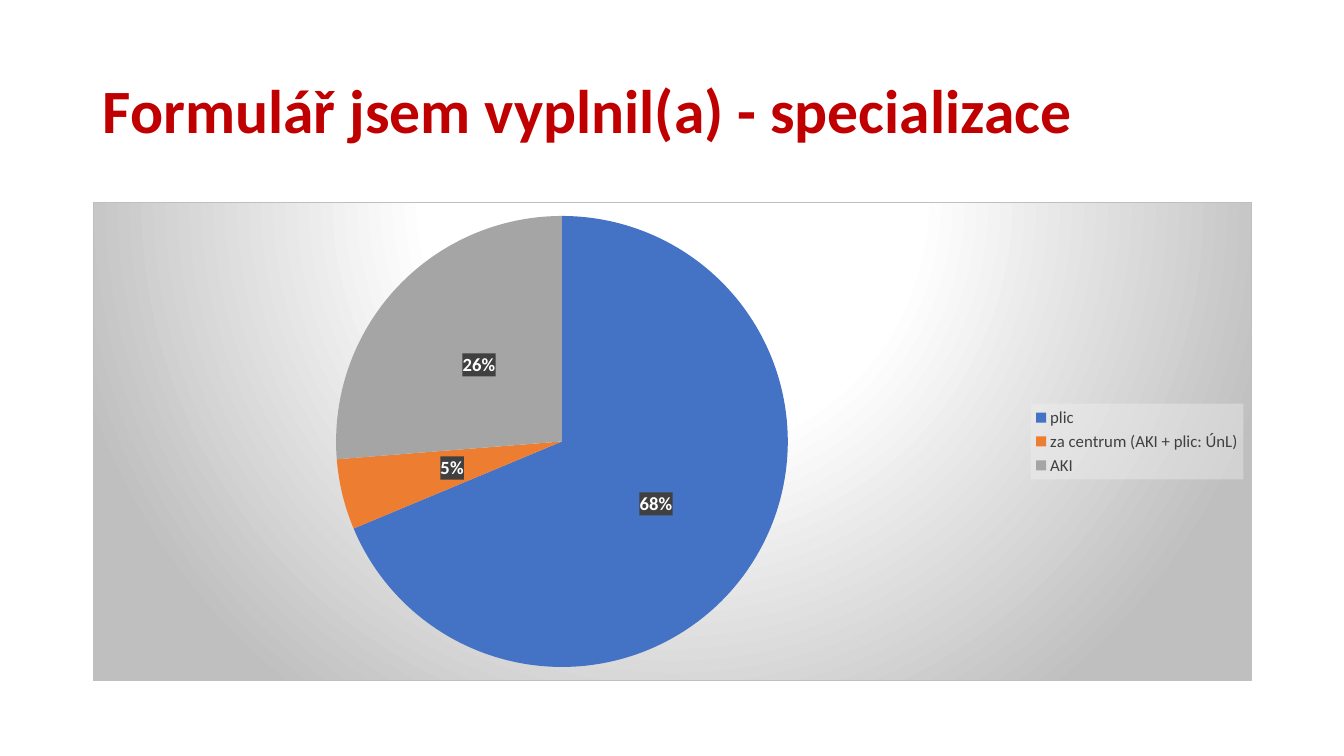
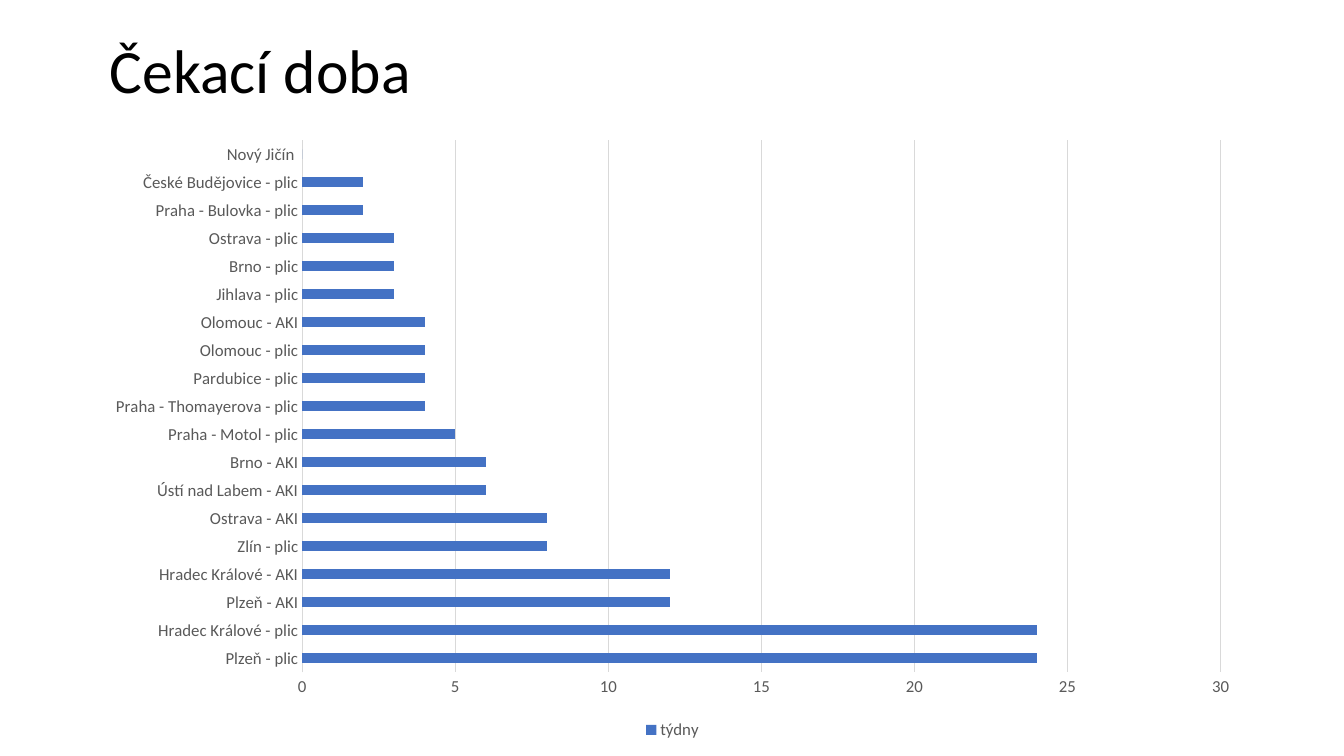
import pptx
import pptx.chart.data
import pptx.dml.color
import pptx.enum.chart
import pptx.enum.text
import pptx.oxml
import pptx.oxml.ns
import pptx.util

Inches = pptx.util.Inches
Pt = pptx.util.Pt
RGBColor = pptx.dml.color.RGBColor
ChartType = pptx.enum.chart.XL_CHART_TYPE
LegendPosition = pptx.enum.chart.XL_LEGEND_POSITION
qn = pptx.oxml.ns.qn

FONT = "Calibri"
BLACK = RGBColor(0x00, 0x00, 0x00)
WHITE = RGBColor(0xFF, 0xFF, 0xFF)
RED = RGBColor(0xC0, 0x00, 0x00)
BLUE = RGBColor(0x44, 0x72, 0xC4)
ORANGE = RGBColor(0xED, 0x7D, 0x31)
GRAY = RGBColor(0xA5, 0xA5, 0xA5)
SILVER = RGBColor(0xBF, 0xBF, 0xBF)
GRID = RGBColor(0xD9, 0xD9, 0xD9)
PALE = RGBColor(0xF2, 0xF2, 0xF2)
AXIS_TEXT = RGBColor(0x59, 0x59, 0x59)
DARK_TEXT = RGBColor(0x40, 0x40, 0x40)

LEFT = 0.92
WIDTH = 11.5
TITLE_HEIGHT = 1.45

SPECIALIZATIONS = [
    ("plic", 68, BLUE),
    ("za centrum (AKI + plic: ÚnL)", 5, ORANGE),
    ("AKI", 26, GRAY),
]
WAITING_WEEKS = [
    ("Plzeň - plic", 24),
    ("Hradec Králové - plic", 24),
    ("Plzeň - AKI", 12),
    ("Hradec Králové - AKI", 12),
    ("Zlín - plic", 8),
    ("Ostrava - AKI", 8),
    ("Ústí nad Labem - AKI", 6),
    ("Brno - AKI", 6),
    ("Praha - Motol - plic", 5),
    ("Praha - Thomayerova - plic", 4),
    ("Pardubice - plic", 4),
    ("Olomouc - plic", 4),
    ("Olomouc - AKI", 4),
    ("Jihlava - plic", 3),
    ("Brno - plic", 3),
    ("Ostrava - plic", 3),
    ("Praha - Bulovka - plic", 2),
    ("České Budějovice - plic", 2),
    ("Nový Jičín ", 0),
]


def style_font(font, size, color, bold=False):
    font.name = FONT
    font.size = Pt(size)
    font.bold = bold
    font.color.rgb = color


def add_titled_slide(deck, text, left, top, color, bold=False):
    slide = deck.slides.add_slide(deck.slide_layouts[5])
    title = slide.shapes.title
    title.left, title.top = Inches(left), Inches(top)
    title.width, title.height = Inches(WIDTH), Inches(TITLE_HEIGHT)
    frame = title.text_frame
    frame.text = text
    frame.vertical_anchor = pptx.enum.text.MSO_ANCHOR.MIDDLE
    heading = frame.paragraphs[0]
    heading.alignment = pptx.enum.text.PP_ALIGN.LEFT
    heading.line_spacing = 0.9
    style_font(heading.font, 44, color, bold)
    return slide


def add_chart(slide, kind, top, height, series_name, labels, values):
    data = pptx.chart.data.CategoryChartData()
    data.categories = labels
    data.add_series(series_name, values)
    chart = slide.shapes.add_chart(
        kind, Inches(LEFT), Inches(top), Inches(WIDTH), Inches(height), data
    ).chart
    chart.has_title = False
    style_font(chart.font, 10, BLACK)
    return chart


def add_legend(chart, position, color):
    chart.has_legend = True
    chart.legend.position = position
    chart.legend.include_in_layout = False
    style_font(chart.legend.font, 12, color)


def shape_properties(content):
    return pptx.oxml.parse_xml(
        f'<c:spPr {pptx.oxml.ns.nsdecls("c", "a")}>{content}</c:spPr>'
    )


def translucent_fill(color, opacity):
    return shape_properties(
        f'<a:solidFill><a:srgbClr val="{color}">'
        f'<a:alpha val="{opacity * 1000}"/></a:srgbClr></a:solidFill>'
    )


def spotlight_background():
    stops = "".join(
        f'<a:gs pos="{position * 1000}"><a:srgbClr val="{color}"/></a:gs>'
        for position, color in ((0, WHITE), (39, WHITE), (100, SILVER))
    )
    return shape_properties(
        f'<a:gradFill><a:gsLst>{stops}</a:gsLst><a:path path="circle">'
        '<a:fillToRect l="50000" t="-80000" r="50000" b="180000"/>'
        f'</a:path></a:gradFill><a:ln w="{Pt(0.75)}"><a:solidFill>'
        f'<a:srgbClr val="{SILVER}"/></a:solidFill></a:ln>'
    )


def insert_before_text(parent, properties):
    parent.find(qn("c:txPr")).addprevious(properties)


def style_axis(axis):
    axis.major_tick_mark = pptx.enum.chart.XL_TICK_MARK.NONE
    axis.minor_tick_mark = pptx.enum.chart.XL_TICK_MARK.NONE
    style_font(axis.tick_labels.font, 12, AXIS_TEXT)


def style_line(line):
    line.color.rgb = GRID
    line.width = Pt(0.75)


def add_specialization_chart(slide):
    names, shares, colors = zip(*SPECIALIZATIONS)
    chart = add_chart(slide, ChartType.PIE, 2, 4.76, "Series 1", names, shares)
    add_legend(chart, LegendPosition.RIGHT, DARK_TEXT)
    pie = chart.plots[0]
    pie.vary_by_categories = True
    for index, color in enumerate(colors):
        fill = pie.series[0].points[index].format.fill
        fill.solid()
        fill.fore_color.rgb = color
    pie.has_data_labels = True
    labels = pie.data_labels
    labels.show_value = True
    labels.show_percentage = False
    labels.number_format = '0"%"'
    labels.number_format_is_linked = False
    labels.position = pptx.enum.chart.XL_LABEL_POSITION.CENTER
    style_font(labels.font, 13.3, WHITE, True)

    space = chart.element
    insert_before_text(space, spotlight_background())
    insert_before_text(next(space.iter(qn("c:legend"))), translucent_fill(PALE, 39))
    insert_before_text(next(space.iter(qn("c:dLbls"))), translucent_fill(DARK_TEXT, 90))


def add_waiting_chart(slide):
    clinics, weeks = zip(*WAITING_WEEKS)
    chart = add_chart(
        slide, ChartType.BAR_CLUSTERED, 1.27, 6.11, "týdny", clinics, weeks
    )
    add_legend(chart, LegendPosition.BOTTOM, AXIS_TEXT)
    bars = chart.plots[0]
    bars.vary_by_categories = False
    bars.gap_width = 182
    fill = bars.series[0].format.fill
    fill.solid()
    fill.fore_color.rgb = BLUE

    style_axis(chart.category_axis)
    style_line(chart.category_axis.format.line)
    scale = chart.value_axis
    style_axis(scale)
    scale.minimum_scale = 0
    scale.maximum_scale = 30
    scale.major_unit = 5
    scale.format.line.fill.background()
    scale.has_major_gridlines = True
    style_line(scale.major_gridlines.format.line)


def main():
    deck = pptx.Presentation()
    deck.slide_width = Inches(13.33)
    deck.slide_height = Inches(7.5)
    add_specialization_chart(
        add_titled_slide(
            deck, "Formulář jsem vyplnil(a) - specializace", LEFT, 0.4, RED, True
        )
    )
    add_waiting_chart(add_titled_slide(deck, "Čekací doba", 0.99, 0, BLACK))
    deck.save("out.pptx")


if __name__ == "__main__":
    main()
